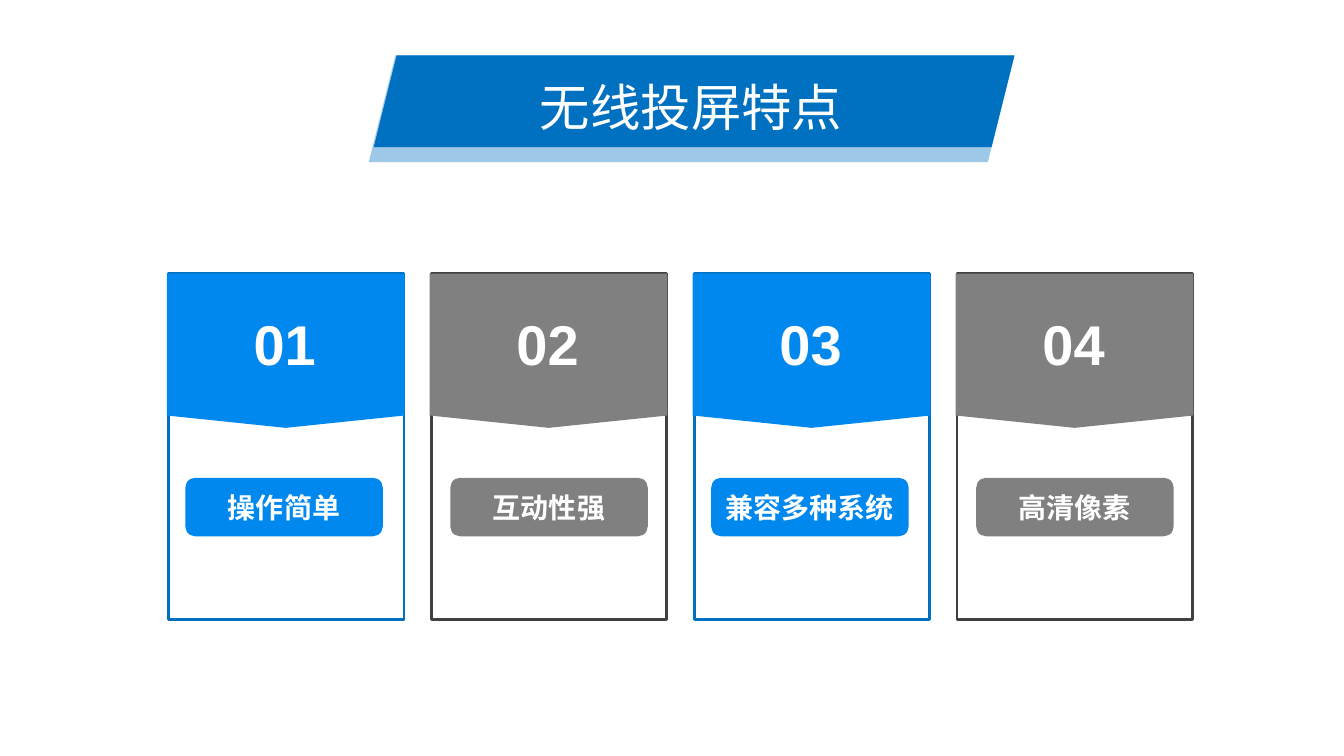
from dataclasses import dataclass

from lxml import etree
from pptx import Presentation
from pptx import util as u
from pptx.dml.color import RGBColor
from pptx.enum import shapes, text
from pptx.oxml import ns
from pptx.shapes.autoshape import Shape
from pptx.slide import Slide


@dataclass(frozen=True)
class Theme:
    banner: str = "0070C0"
    blue: str = "0088EE"
    gray: str = "808080"
    dark: str = "404040"
    white: str = "FFFFFF"
    latin_font: str = "Arial"
    chinese_font: str = "Noto Sans CJK SC"
    title_size: int = 36
    number_size: int = 40
    label_size: int = 20


@dataclass(frozen=True)
class Box:
    left: float
    top: float
    width: float
    height: float

    def lengths(self) -> list[u.Length]:
        return [u.Inches(v) for v in (self.left, self.top, self.width, self.height)]


@dataclass(frozen=True)
class CardStyle:
    fill: str
    border: str
    label_inset: float


@dataclass(frozen=True)
class Card:
    label: str
    style: CardStyle


THEME = Theme()
BLUE_CARD = CardStyle(THEME.blue, THEME.banner, 0.17)
GRAY_CARD = CardStyle(THEME.gray, THEME.dark, 0.19)
CARDS = [
    Card("操作简单", BLUE_CARD),
    Card("互动性强", GRAY_CARD),
    Card("兼容多种系统", BLUE_CARD),
    Card("高清像素", GRAY_CARD),
]
FIRST_CARD_LEFT = 1.67
CARD_PITCH = 2.61


def add_block(slide: Slide, kind: shapes.MSO_SHAPE, box: Box, fill: str) -> Shape:
    shape = slide.shapes.add_shape(kind, *box.lengths())
    shape.shadow.inherit = False
    shape.fill.solid()
    shape.fill.fore_color.rgb = RGBColor.from_string(fill)
    shape.line.fill.background()
    return shape


def write_text(shape: Shape, words: str, font_name: str, size: int, bold: bool,
               anchor: text.MSO_ANCHOR = text.MSO_ANCHOR.TOP) -> None:
    frame = shape.text_frame
    frame_format = {"word_wrap": True, "vertical_anchor": anchor,
                    "auto_size": text.MSO_AUTO_SIZE.NONE}
    for name, value in frame_format.items():
        setattr(frame, name, value)
    paragraph = frame.paragraphs[0]
    paragraph.alignment = text.PP_ALIGN.CENTER
    run = paragraph.add_run()
    run.text = words
    run.font.color.rgb = RGBColor.from_string(THEME.white)
    for name, value in {"name": font_name, "size": u.Pt(size), "bold": bold}.items():
        setattr(run.font, name, value)
    # Chinese characters take their font from a separate element
    latin = run.font.color and run._r.rPr.find(ns.qn("a:latin"))
    east_asian = etree.Element(ns.qn("a:ea"), typeface=THEME.chinese_font)
    latin.addnext(east_asian)


def add_banner(slide: Slide) -> None:
    parallelogram = shapes.MSO_SHAPE.PARALLELOGRAM
    backing = add_block(slide, parallelogram, Box(3.66, 0.55, 6.41, 1.06), THEME.banner)
    color = backing.element.spPr.find(ns.qn("a:solidFill"))[0]
    etree.SubElement(color, ns.qn("a:alpha"), val="38000")
    front = add_block(slide, parallelogram, Box(3.71, 0.55, 6.36, 0.91), THEME.banner)

    # Title placeholder, raised above the banner
    title = slide.shapes.title
    title.left, title.top, title.width, title.height = Box(4.21, 0.36, 5.3, 1.04).lengths()
    write_text(title, "无线投屏特点", THEME.chinese_font, THEME.title_size, False)
    title.text_frame.paragraphs[0].line_spacing = u.Pt(68)
    front.element.addnext(title.element)


def add_card(slide: Slide, index: int, card: Card) -> None:
    left = FIRST_CARD_LEFT + index * CARD_PITCH
    style = card.style

    # Frame
    frame = add_block(slide, shapes.MSO_SHAPE.RECTANGLE,
                      Box(left, 2.71, 2.34, 3.44), THEME.white)
    frame.line.color.rgb = RGBColor.from_string(style.border)
    frame.line.width = u.Pt(2)

    # Header pointing down
    header = add_block(slide, shapes.MSO_SHAPE.PENTAGON,
                       Box(left + 0.4, 2.3, 1.53, 2.36), style.fill)
    header.rotation = 90
    header.adjustments[0] = 0.08

    # Label
    label = add_block(slide, shapes.MSO_SHAPE.ROUNDED_RECTANGLE,
                      Box(left + style.label_inset, 4.74, 1.96, 0.58), style.fill)
    write_text(label, card.label, THEME.latin_font, THEME.label_size, True,
               text.MSO_ANCHOR.MIDDLE)

    # Number
    number = slide.shapes.add_textbox(*Box(left + 0.5, 3.02, 1.31, 0.77).lengths())
    write_text(number, f"{index + 1:02}", THEME.latin_font, THEME.number_size, True)


def main() -> None:
    presentation = Presentation()
    presentation.slide_width = u.Inches(13.34)
    presentation.slide_height = u.Inches(7.5)
    slide = presentation.slides.add_slide(presentation.slide_layouts.get_by_name("Title Only"))
    add_banner(slide)
    for index, card in enumerate(CARDS):
        add_card(slide, index, card)
    presentation.save("out.pptx")


if __name__ == "__main__":
    main()
